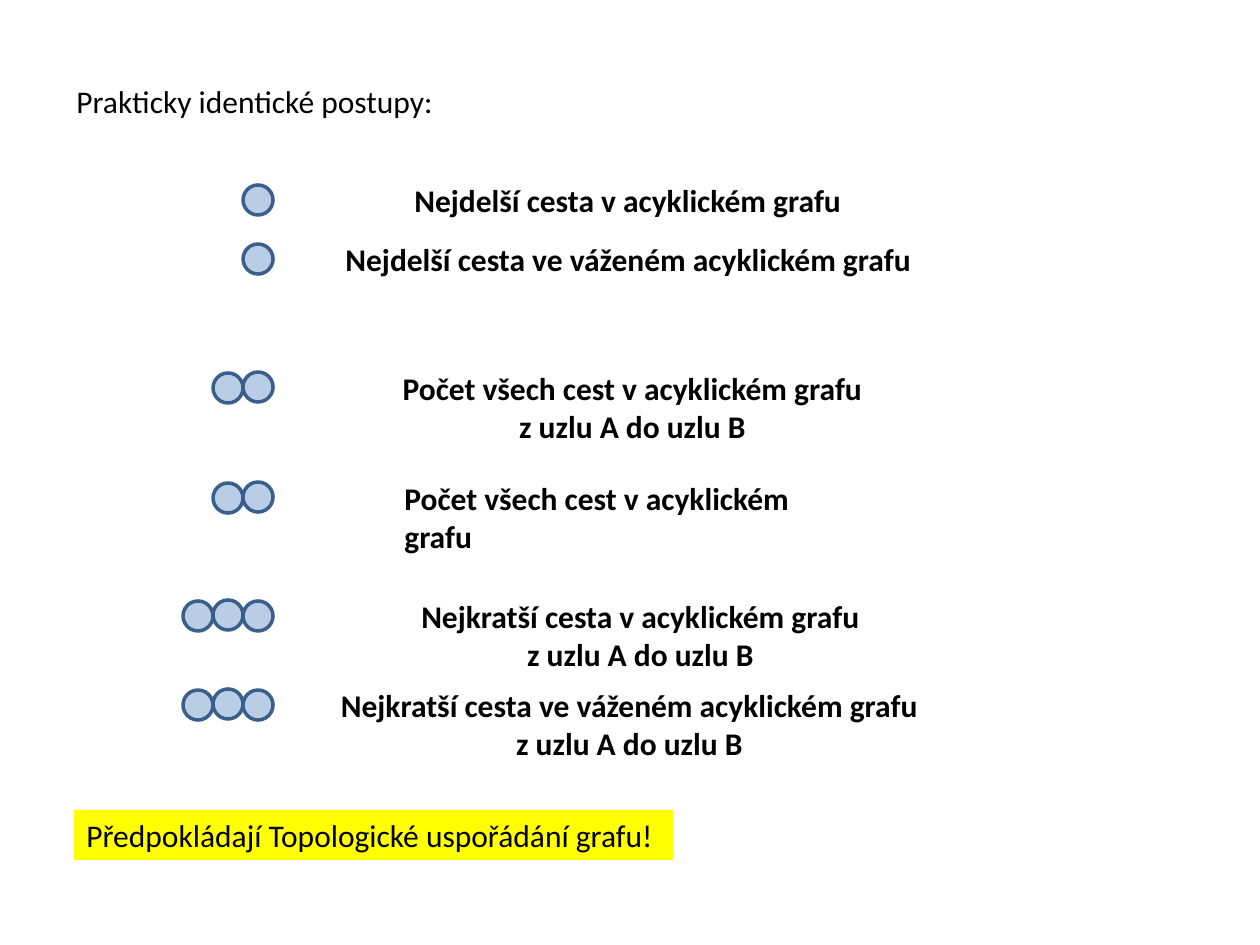
import pptx
import pptx.util
import pptx.dml.color
import pptx.enum.shapes
import pptx.enum.text

EMU_PER_PX = 914400 / 126
COLORS = {"text": "000000", "node": "B9CDE5", "outline": "3A5F8C", "highlight": "FFFF00"}
NODE_SIZE = 30
LAST_NODE_LEFT = 243
TARGET = "z uzlu A do uzlu B"
ALIGN = pptx.enum.text.PP_ALIGN

TOPICS = [
    (402, 175, 456, 50, 1, ["Nejdelší cesta v acyklickém grafu"]),
    (333, 234, 596, 50, 1, ["Nejdelší cesta ve váženém acyklickém grafu"]),
    (388, 363, 489, 89, 2, ["Počet všech cest v acyklickém grafu", TARGET]),
    (392, 473, 480, 50, 2, ["Počet všech cest v acyklickém grafu"]),
    (407, 591, 467, 89, 3, ["Nejkratší cesta v acyklickém grafu", TARGET]),
    (326, 680, 607, 89, 3, ["Nejkratší cesta ve váženém acyklickém grafu", TARGET]),
]
WRAPPED_TOPIC = 3


def px(value):
    return pptx.util.Emu(int(value * EMU_PER_PX))


def color(name):
    return pptx.dml.color.RGBColor.from_string(COLORS[name])


def add_text(page, area, lines, bold=False, wrap=False, fill=None):
    box = page.shapes.add_textbox(*map(px, area))
    if fill:
        box.fill.solid()
        box.fill.fore_color.rgb = color(fill)
    frame = box.text_frame
    frame.word_wrap = wrap
    font_format = {"name": "Calibri", "size": pptx.util.Pt(18), "bold": bold}
    for index, line in enumerate(lines):
        para = frame.paragraphs[0] if index == 0 else frame.add_paragraph()
        para.alignment = ALIGN.CENTER if len(lines) > 1 else ALIGN.LEFT
        span = para.add_run()
        span.text = line
        for attribute, value in font_format.items():
            setattr(span.font, attribute, value)
        span.font.color.rgb = color("text")


def add_node(page, left, top):
    node = page.shapes.add_shape(
        pptx.enum.shapes.MSO_SHAPE.OVAL, *map(px, (left, top, NODE_SIZE, NODE_SIZE))
    )
    node.shadow.inherit = False
    node.fill.solid()
    node.fill.fore_color.rgb = color("node")
    node.line.color.rgb = color("outline")
    node.line.width = pptx.util.Pt(2)


def add_node_row(page, top, count):
    first_left = LAST_NODE_LEFT - NODE_SIZE * (count - 1)
    for index in range(count):
        add_node(page, first_left + NODE_SIZE * index, top - index % 2)


def main():
    deck = pptx.Presentation()
    deck.slide_width, deck.slide_height = px(1260), px(945)
    page = deck.slides.add_slide(deck.slide_layouts[6])
    add_text(page, (64, 76, 386, 50), ["Prakticky identické postupy:"])
    for index, (left, top, width, height, count, lines) in enumerate(TOPICS):
        area = (left, top, width, height)
        add_text(page, area, lines, bold=True, wrap=index == WRAPPED_TOPIC)
        add_node_row(page, top + 10, count)
    add_text(
        page, (74, 810, 599, 50), ["Předpokládají Topologické uspořádání grafu!"],
        wrap=True, fill="highlight",
    )
    deck.save("out.pptx")


if __name__ == "__main__":
    main()
